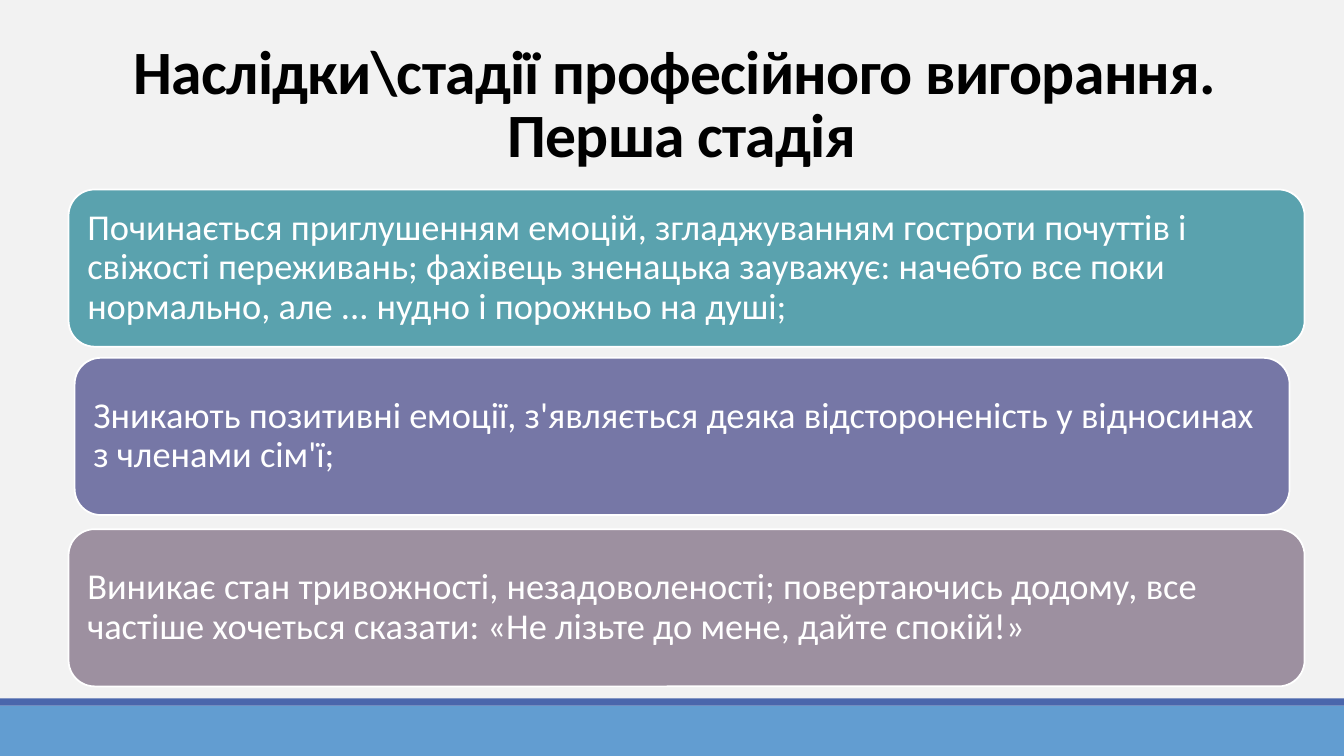
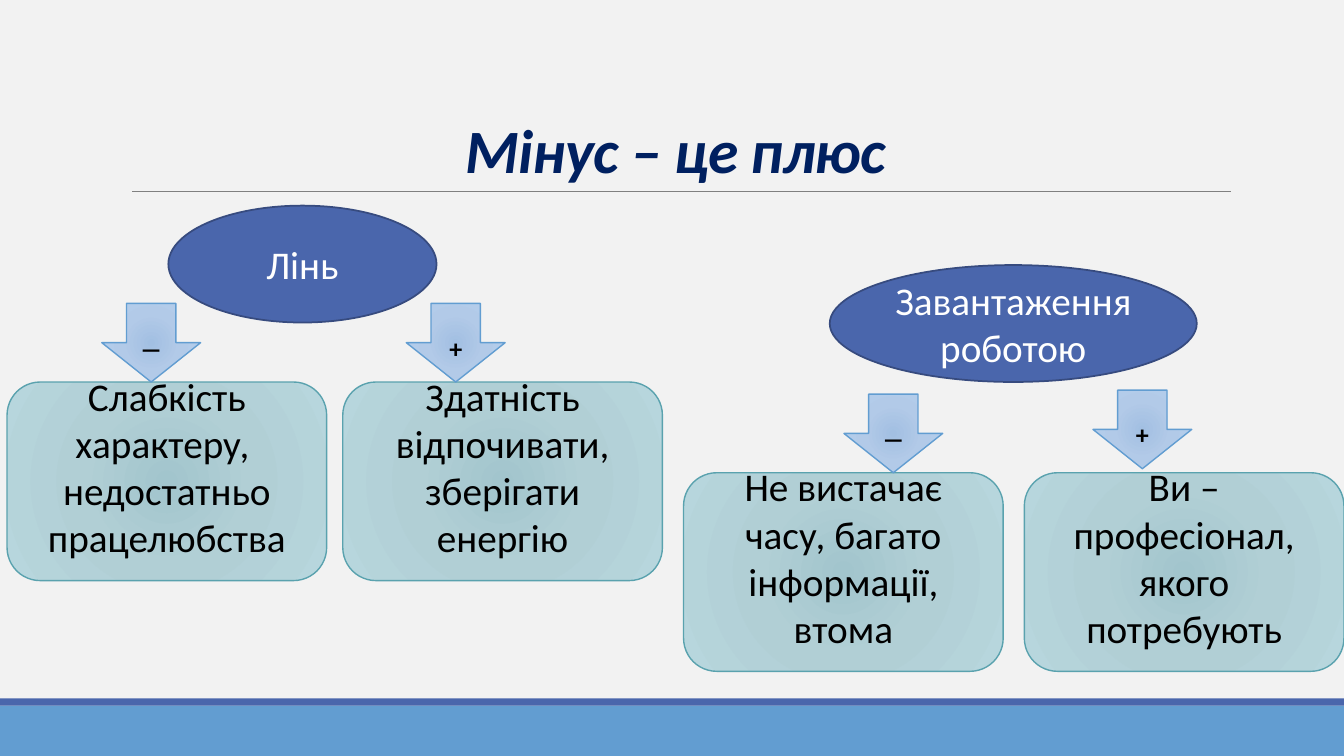
"""Build two slides on the stages of burnout and on minuses that are pluses."""
from pptx import Presentation
from pptx.dml.color import RGBColor
from pptx.enum.shapes import MSO_CONNECTOR, MSO_SHAPE
from pptx.enum.text import MSO_ANCHOR, MSO_AUTO_SIZE, PP_ALIGN
from pptx.oxml import parse_xml
from pptx.oxml.ns import nsdecls
from pptx.util import Inches, Pt

WIDE, HIGH = 13.33, 7.5
WHITE = RGBColor(0xFF, 0xFF, 0xFF)
BLACK = RGBColor(0x00, 0x00, 0x00)
PAPER = RGBColor(0xF2, 0xF2, 0xF2)
NAVY = RGBColor(0x00, 0x20, 0x60)
BLUE = RGBColor(0x4A, 0x66, 0xAC)
EDGE = RGBColor(0x37, 0x4B, 0x7F)
SKY = RGBColor(0x62, 0x9D, 0xD1)
TEAL = RGBColor(0x5A, 0xA2, 0xAE)
PLUM = RGBColor(0x76, 0x77, 0xA6)
MAUVE = RGBColor(0x9D, 0x90, 0xA0)
GREY = RGBColor(0x80, 0x80, 0x80)
MIST = ((0, RGBColor(0xA2, 0xC5, 0xCD)), (45, RGBColor(0xB1, 0xCF, 0xD5)), (100, RGBColor(0xB7, 0xD6, 0xDD)))
HAZE = ((0, RGBColor(0xA2, 0xBF, 0xE2)), (45, RGBColor(0xB2, 0xCA, 0xE8)), (100, RGBColor(0xB6, 0xD0, 0xEF)))

BANDS = [((0, 6.93, WIDE, 0.07), BLUE), ((0, 7, WIDE, 0.5), SKY)]

HEAD = dict(size=Pt(44), bold=True)
BODY = dict(size=Pt(26))
LABEL = dict(size=Pt(28))
SIGN = dict(size=Pt(32), bold=True)

STAGE = "Наслідки\\стадії професійного вигорання. \vПерша стадія"
BARS = [
    (1.88, 0, TEAL, "Починається приглушенням емоцій, згладжуванням гостроти почуттів і свіжості "
     "переживань; фахівець зненацька зауважує: начебто все поки нормально, але ... нудно і "
     "порожньо на душі;"),
    (3.55, 0.06, PLUM, "Зникають позитивні емоції, з'являється деяка відстороненість у відносинах "
     "з членами сім'ї;"),
    (5.25, 0, MAUVE, "Виникає стан тривожності, незадоволеності; повертаючись додому, все частіше "
     "хочеться сказати: «Не лізьте до мене, дайте спокій!»"),
]

MINUS = "Мінус – це плюс"
TRAITS = [
    dict(name="Лінь", oval=(1.67, 2.04, 2.66, 1.16), top=3.79, sides=[
        ("―", 0.07, 1.01, 3.01, "Слабкість характеру, \nнедостатньо працелюбства"),
        ("+", 3.4, 4.03, 3.01, "Здатність відпочивати, зберігати енергію")]),
    dict(name="Завантаження роботою", oval=(8.23, 2.63, 3.64, 1.16), top=4.69, sides=[
        ("―", 6.78, 8.37, 3.91, "Не вистачає часу, багато інформації, втома"),
        ("+", 10.16, 10.84, 3.87, "Ви – професіонал, якого потребують")]),
]


def write(frame, text, look, tint, align=PP_ALIGN.CENTER, gap=1.0, marks=()):
    """Fill a text frame and format every run."""
    frame.text = text
    frame.word_wrap = True
    for para in frame.paragraphs:
        para.alignment, para.line_spacing = align, gap
        for run in para.runs:
            for key, value in dict(look, name="Calibri").items():
                setattr(run.font, key, value)
            run.font.color.rgb = tint
            for key, value in marks:
                run.font._element.set(key, value)


def glow(shape, stops):
    """Give a shape a round gradient."""
    shape.fill.background()
    tints = "".join(f'<a:gs pos="{at * 1000}"><a:srgbClr val="{tint}"/></a:gs>' for at, tint in stops)
    fill = parse_xml(
        f'<a:gradFill {nsdecls("a")} rotWithShape="1"><a:gsLst>{tints}</a:gsLst><a:path path="circle">'
        '<a:fillToRect l="50000" t="50000" r="50000" b="50000"/></a:path></a:gradFill>')
    props = shape.element.spPr
    props.replace(props.find("{*}noFill"), fill)


def draw(slide, kind, box, fill, edge=None, width=1):
    """Add a preset shape with its fill and outline."""
    shape = slide.shapes.add_shape(kind, *map(Inches, box))
    shape.shadow.inherit = False
    if isinstance(fill, RGBColor):
        shape.fill.solid()
        shape.fill.fore_color.rgb = fill
    else:
        glow(shape, fill)
    if edge is None:
        shape.line.fill.background()
    else:
        shape.line.color.rgb, shape.line.width = edge, Pt(width)
    shape.text_frame.vertical_anchor = MSO_ANCHOR.MIDDLE
    return shape


def entitle(slide, text, box, look, tint):
    """Place and format the title placeholder."""
    title = slide.shapes.title
    for key, value in zip(("left", "top", "width", "height"), box):
        setattr(title, key, Inches(value))
    frame = title.text_frame
    frame.auto_size = MSO_AUTO_SIZE.NONE
    frame.vertical_anchor = MSO_ANCHOR.BOTTOM
    write(frame, text, look, tint, gap=0.85, marks=[("spc", "-50")])


def dress(deck, slide):
    """Set the paper and the bottom bands on the master."""
    master = deck.slide_master
    master.background.fill.solid()
    master.background.fill.fore_color.rgb = PAPER
    for box, tint in BANDS:
        band = draw(slide, MSO_SHAPE.RECTANGLE, box, tint)
        master.shapes.element.insert(2, band.element)


def stage(slide):
    """Build the slide of the first stage."""
    entitle(slide, STAGE, (0.58, 0.34, 12.36, 1.4), HEAD, BLACK)
    for top, inset, tint, text in BARS:
        box = (0.68 + inset, top, 12.26 - 3.5 * inset, 1.56)
        frame = draw(slide, MSO_SHAPE.ROUNDED_RECTANGLE, box, tint, WHITE, 1.25).text_frame
        for side in ("left", "right", "top", "bottom"):
            setattr(frame, f"margin_{side}", Inches(0.11))
        write(frame, text, BODY, WHITE, PP_ALIGN.LEFT, 0.9)


def minus(slide):
    """Build the slide of traits with their two sides."""
    entitle(slide, MINUS, (1.2, 0.31, 11, 1.59), dict(HEAD, italic=True), NAVY)
    ends = (Inches(n) for n in (1.31, 1.9, 12.21, 1.9))
    rule = slide.shapes.add_connector(MSO_CONNECTOR.STRAIGHT, *ends)
    rule.line.color.rgb, rule.line.width = GREY, Pt(0.5)
    rule.element.spPr.append(parse_xml(f'<a:effectLst {nsdecls("a")}/>'))
    for trait in TRAITS:
        oval = draw(slide, MSO_SHAPE.OVAL, trait["oval"], BLUE, EDGE, 1.25)
        write(oval.text_frame, trait["name"], LABEL, WHITE)
        for sign, left, tip, high, text in trait["sides"]:
            card = draw(slide, MSO_SHAPE.FLOWCHART_ALTERNATE_PROCESS,
                        (left, trait["top"], 3.17, 1.97), MIST, TEAL)
            card.text_frame.margin_bottom = Inches(0.35)
            write(card.text_frame, text, LABEL, BLACK)
            arrow = draw(slide, MSO_SHAPE.DOWN_ARROW, (tip, high, 0.98, 0.78), HAZE, SKY)
            write(arrow.text_frame, sign, SIGN, BLACK, marks=[("baseline", "-25000")])


def main():
    """Build and save the deck."""
    deck = Presentation()
    deck.slide_width, deck.slide_height = Inches(WIDE), Inches(HIGH)
    first, second = (deck.slides.add_slide(deck.slide_layouts[5]) for _ in range(2))
    dress(deck, first)
    stage(first)
    minus(second)
    deck.save("out.pptx")


if __name__ == "__main__":
    main()
